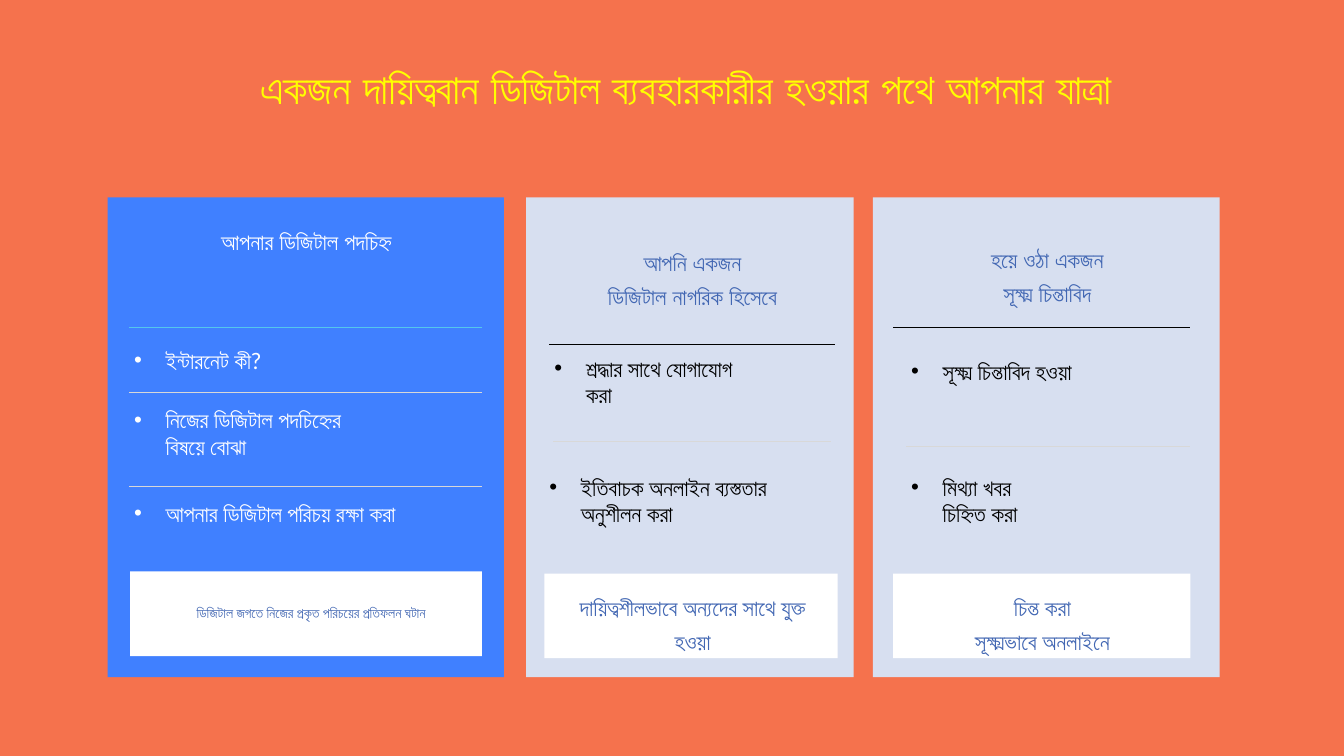
from lxml import etree
from pptx import Presentation
from pptx.dml.color import RGBColor
from pptx.enum.shapes import MSO_CONNECTOR, MSO_SHAPE
from pptx.enum.text import MSO_ANCHOR, MSO_AUTO_SIZE, PP_ALIGN
from pptx.oxml.ns import qn
from pptx.util import Pt

CENTER, LEFT = PP_ALIGN.CENTER, PP_ALIGN.LEFT
TOP = MSO_ANCHOR.TOP
NO_FIT = MSO_AUTO_SIZE.NONE
RECTANGLE = MSO_SHAPE.RECTANGLE
STRAIGHT = MSO_CONNECTOR.STRAIGHT

ORANGE = RGBColor(0xF5, 0x72, 0x4D)
BLUE = RGBColor(0x40, 0x80, 0xFF)
PALE = RGBColor(0xD7, 0xDF, 0xF0)
WHITE = RGBColor(0xFF, 0xFF, 0xFF)
BLACK = RGBColor(0, 0, 0)
YELLOW = RGBColor(0xFF, 0xFF, 0)
NAVY = RGBColor(0x42, 0x67, 0xB3)
CYAN = RGBColor(0x54, 0xC6, 0xEC)
GRAY = RGBColor(0xD8, 0xD8, 0xD8)

FONT = "Lato"
CARD_TOP, CARD_HEIGHT = 141, 342.7
PANEL_HEIGHT = 60.5
TEXT_HEIGHT = 46
NOTE_TOP = 416.2
INDENT = 22.5

TITLE = "একজন দায়িত্ববান ডিজিটাল ব্যবহারকারীর হওয়ার পথে আপনার যাত্রা"
CARDS = [
    {
        "span": (77, 283), "fill": BLUE, "ink": WHITE,
        "heading": ("আপনার ডিজিটাল পদচিহ্ন", 150.5, 154.8, 136.8, WHITE),
        "bullets": [
            ("ইন্টারনেট কী?", 92.2, 244.1, 209.5),
            ("নিজের ডিজিটাল পদচিহ্নের বিষয়ে বোঝা", 92.2, 286.6, 180),
            ("আপনার ডিজিটাল পরিচয় রক্ষা করা", 92.2, 353.5, 245.5),
        ],
        "panel": (92.9, 408.2, 251.3),
        "note": ("ডিজিটাল জগতে নিজের প্রকৃত পরিচয়ের প্রতিফলন ঘটান", 99.4, 245.5, 10, 2),
        "rules": [(92.2, 344.2, 234, CYAN), (92.2, 344.2, 280.1, GRAY),
                  (92.2, 344.2, 347.8, GRAY)],
    },
    {
        "span": (375.8, 234), "fill": PALE, "ink": BLACK,
        "heading": ("আপনি একজন\vডিজিটাল নাগরিক হিসেবে", 414.7, 169.9, 159.8, NAVY),
        "bullets": [
            ("শ্রদ্ধার সাথে যোগাযোগ করা", 392.4, 249.8, 145.4),
            ("ইতিবাচক অনলাইন ব্যস্ততার অনুশীলন করা", 388.8, 334.8, 169.9),
        ],
        "panel": (388.8, 409.7, 209.5),
        "note": ("দায়িত্বশীলভাবে অন্যদের সাথে যুক্ত হওয়া", 398.2, 193, 16, 1.25),
        "rules": [(392.4, 596.2, 246.2, BLACK), (395.3, 593.3, 315.4, GRAY)],
    },
    {
        "span": (623.5, 247.7), "fill": PALE, "ink": BLACK,
        "heading": ("হয়ে ওঠা একজন\nসূক্ষ্ম চিন্তাবিদ", 661.7, 167.8, 172.8, NAVY),
        "bullets": [
            ("সূক্ষ্ম চিন্তাবিদ হওয়া", 647.3, 252, 136.8),
            ("মিথ্যা খবর চিহ্নিত করা", 647.3, 334.8, 110.2),
        ],
        "panel": (637.9, 409.7, 212.4),
        "note": ("চিন্ত করা\nসূক্ষ্মভাবে অনলাইনে", 658.8, 171.4, 16, 1.25),
        "rules": [(637.9, 850.3, 234, BLACK), (647.3, 850.3, 319, GRAY)],
    },
]


def add_block(page, left, top, width, height, color):
    block = page.shapes.add_shape(RECTANGLE, Pt(left), Pt(top), Pt(width), Pt(height))
    block.shadow.inherit = False
    block.fill.solid()
    block.fill.fore_color.rgb = color
    block.line.fill.background()


def add_bullet(para, color):
    settings = para._p.get_or_add_pPr()
    settings.set("marL", str(Pt(INDENT)))
    settings.set("indent", str(-Pt(INDENT)))
    bullet_color = etree.SubElement(settings, qn("a:buClr"))
    etree.SubElement(bullet_color, qn("a:srgbClr"), val=str(color))
    etree.SubElement(settings, qn("a:buFont"), typeface="Arial")
    etree.SubElement(settings, qn("a:buChar"), char="•")


def write(box, text, size, color, bold=False, spacing=1.0, align=CENTER,
          bullet=False):
    frame = box.text_frame
    frame.word_wrap = True
    frame.auto_size = NO_FIT
    frame.vertical_anchor = TOP
    frame.margin_left = frame.margin_right = Pt(3.6 if bullet else 7.2)
    frame.margin_top = frame.margin_bottom = Pt(3.6)
    frame.text = text
    for para in frame.paragraphs:
        if bullet:
            add_bullet(para, color)
        para.alignment = align
        para.line_spacing = spacing
        para.font.name = FONT
        para.font.size = Pt(size)
        para.font.bold = bold
        para.font.color.rgb = color


def add_text(page, left, top, width, *content, **style):
    box = page.shapes.add_textbox(Pt(left), Pt(top), Pt(width), Pt(TEXT_HEIGHT))
    write(box, *content, **style)


def add_rule(page, start, end, height, color):
    rule = page.shapes.add_connector(STRAIGHT, Pt(start), Pt(height), Pt(end), Pt(height))
    rule.line.color.rgb = color
    rule.line.width = Pt(0.75)
    etree.SubElement(rule._element.spPr, qn("a:effectLst"))


def add_card(page, card):
    left, width = card["span"]
    add_block(page, left, CARD_TOP, width, CARD_HEIGHT, card["fill"])
    add_block(page, *card["panel"], PANEL_HEIGHT, WHITE)
    text, left, top, width, color = card["heading"]
    add_text(page, left, top, width, text, 16, color, bold=True, spacing=1.25)
    for text, left, top, width in card["bullets"]:
        add_text(page, left, top, width, text, 16, card["ink"], align=LEFT, bullet=True)
    text, left, width, size, spacing = card["note"]
    add_text(page, left, NOTE_TOP, width, text, size, NAVY, spacing=spacing)
    for rule in card["rules"]:
        add_rule(page, *rule)


def main():
    deck = Presentation()
    deck.slide_width, deck.slide_height = Pt(960), Pt(540)
    page = deck.slides.add_slide(deck.slide_layouts[5])
    page.background.fill.solid()
    page.background.fill.fore_color.rgb = ORANGE
    title = page.shapes.title
    title.left, title.top, title.width, title.height = Pt(69), Pt(43), Pt(842.5), Pt(78)
    write(title, TITLE, 30, YELLOW, bold=True, spacing=0.97)
    for card in CARDS:
        add_card(page, card)
    deck.save("out.pptx")


if __name__ == "__main__":
    main()
